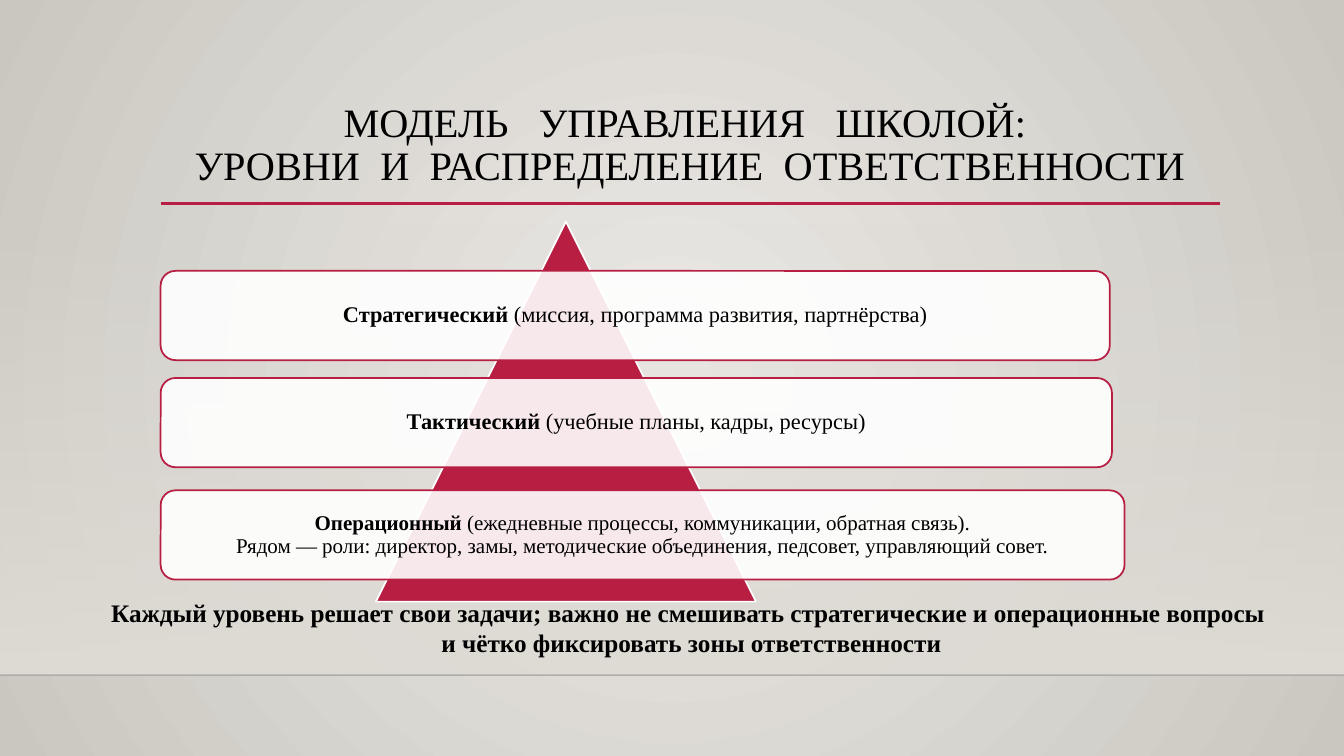
from lxml import etree
from pptx import Presentation
from pptx import util as u
from pptx.dml.color import RGBColor
from pptx.enum import shapes, text
from pptx.oxml.ns import qn

PX = 9525
FONT = "Times New Roman"
COLOURS = {
    "glow": "ECEAE7",
    "edge": "CAC7C1",
    "floor": "DFDBD5",
    "horizon": "000001",
    "accent": "B71E42",
    "white": "FFFFFF",
    "ink": "000000",
}
LEVELS = [
    (258, 904, 16, "Стратегический", [" (миссия, программа развития, партнёрства)"]),
    (360, 906, 16, "Тактический", [" (учебные планы, кадры, ресурсы)"]),
    (467, 918, 15, "Операционный", [
        " (ежедневные процессы, коммуникации, обратная связь).",
        "Рядом — роли: директор, замы, методические объединения, педсовет, управляющий совет.",
    ]),
]
TITLE = [
    (["МОДЕЛЬ", "УПРАВЛЕНИЯ", "ШКОЛОЙ: "], 14.4),
    (["УРОВНИ", "И", "РАСПРЕДЕЛЕНИЕ", "ОТВЕТСТВЕННОСТИ"], 7.2),
]
SUMMARY = [
    "Каждый уровень решает свои задачи; важно не смешивать стратегические и операционные вопросы ",
    "и чётко фиксировать зоны ответственности",
]


def px(*values):
    return [u.Emu(value * PX) for value in values]


def rgb(name):
    return RGBColor.from_string(COLOURS[name])


def set_alpha(colour, percent):
    """Make an a:srgbClr element partly transparent."""
    etree.SubElement(colour, qn("a:alpha")).set("val", str(percent * 1000))


def fill_gradient(fill, start, end):
    fill.gradient()
    for stop, name in zip(fill.gradient_stops, (start, end)):
        stop.color.rgb = rgb(name)


def style_paragraph(para, size, line_spacing=None):
    para.alignment = text.PP_ALIGN.CENTER
    para.line_spacing = line_spacing
    para.font.name = FONT
    para.font.size = u.Pt(size)
    para.font.color.rgb = rgb("ink")


def paint_background(page):
    fill_gradient(page.background.fill, "glow", "edge")
    gradient = page._element.find(".//" + qn("a:gradFill"))
    gradient.remove(gradient.find(qn("a:lin")))
    circle = etree.SubElement(gradient, qn("a:path"))
    circle.set("path", "circle")
    centre = etree.SubElement(circle, qn("a:fillToRect"))
    for side in "ltrb":
        centre.set(side, "50000")


def add_floor(page):
    floor = page.shapes.add_shape(shapes.MSO_SHAPE.RECTANGLE, *px(0, 212, 1280, 431))
    floor.shadow.inherit = False
    floor.line.fill.background()
    fill_gradient(floor.fill, "floor", "floor")
    floor.fill.gradient_angle = 270
    set_alpha(floor._element.find(".//" + qn("a:gs")).find(qn("a:srgbClr")), 0)


def add_rule(page, left, right, y, colour, width):
    rule = page.shapes.add_connector(shapes.MSO_CONNECTOR.STRAIGHT, *px(left, y, right, y))
    rule.line.color.rgb = rgb(colour)
    rule.line.width = u.Pt(width)
    etree.SubElement(rule._element.spPr, qn("a:effectLst"))
    return rule


def add_title(page):
    title = page.shapes.title
    title.left, title.top, title.width, title.height = px(153, 84, 1008, 110)
    frame = title.text_frame
    frame.word_wrap = True
    frame.vertical_anchor = text.MSO_ANCHOR.MIDDLE
    para = frame.paragraphs[0]
    for row, (words, gap) in enumerate(TITLE):
        if row:
            para.add_line_break()
        for index, word in enumerate(words):
            if index:
                space = para.add_run()
                space.text = " "
                space.font._element.set("spc", str(round(gap * 100)))
            para.add_run().text = word
    style_paragraph(para, 28.8, 0.9)


def add_solid(page, kind, place, fill, line):
    shape = page.shapes.add_shape(kind, *px(*place))
    shape.shadow.inherit = False
    shape.fill.solid()
    shape.fill.fore_color.rgb = rgb(fill)
    shape.line.color.rgb = rgb(line)
    shape.line.width = u.Pt(1.25)
    return shape


def add_level(page, top, width, size, name, details):
    card = add_solid(page, shapes.MSO_SHAPE.ROUNDED_RECTANGLE,
                     (153, top, width, 85), "white", "accent")
    set_alpha(card._element.spPr.find(qn("a:solidFill"))[0], 90)
    frame = card.text_frame
    frame.word_wrap = True
    frame.vertical_anchor = text.MSO_ANCHOR.MIDDLE
    para = frame.paragraphs[0]
    span = para.add_run()
    span.text = name
    span.font.bold = True
    for index, detail in enumerate(details):
        if index:
            para.add_line_break()
        para.add_run().text = detail
    style_paragraph(para, size, 0.9)


def add_summary(page):
    box = page.shapes.add_textbox(*px(-20, 564, 1357, 68))
    frame = box.text_frame
    frame.word_wrap = True
    frame.text = "\n".join(SUMMARY)
    for para in frame.paragraphs:
        style_paragraph(para, 18)
        para.font.bold = True


def main():
    deck = Presentation()
    deck.slide_width, deck.slide_height = px(1280, 720)
    page = deck.slides.add_slide(deck.slide_layouts[5])
    paint_background(page)
    add_floor(page)
    horizon = add_rule(page, 0, 1280, 643, "horizon", 1)
    set_alpha(horizon._element.find(".//" + qn("a:srgbClr")), 20)
    add_rule(page, 153, 1162, 194, "accent", 2.5)
    add_title(page)
    add_solid(page, shapes.MSO_SHAPE.ISOSCELES_TRIANGLE,
              (358, 211, 362, 362), "accent", "white")
    for level in LEVELS:
        add_level(page, *level)
    add_summary(page)
    deck.save("out.pptx")


if __name__ == "__main__":
    main()
